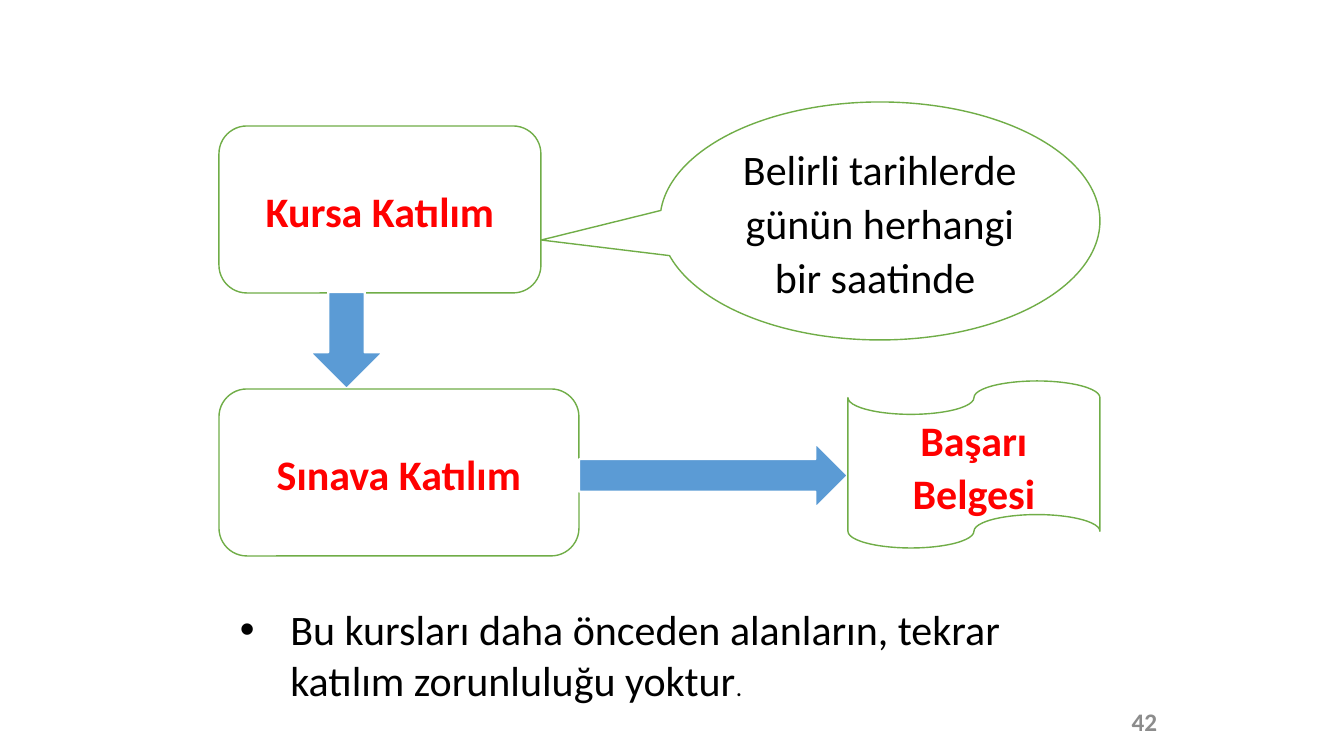
from dataclasses import dataclass

from lxml import etree
from pptx import Presentation
from pptx import util as u
from pptx.dml import color
from pptx.enum import shapes, text
from pptx.oxml import ns

PX = 914400 / 100.8
KIND = shapes.MSO_SHAPE


@dataclass(frozen=True)
class Theme:
    font: str = "Calibri"
    white: str = "FFFFFF"
    black: str = "000000"
    red: str = "FF0000"
    green: str = "70AD47"
    blue: str = "5B9BD5"
    grey: str = "8C8C8C"
    body: int = 30
    small: int = 18


THEME = Theme()


def px(*lengths):
    return [u.Emu(round(length * PX)) for length in lengths]


def rgb(value):
    return color.RGBColor.from_string(value)


def add_span(para, words, size, tint, bold=False):
    span = para.add_run()
    span.text = words
    span.font.name = THEME.font
    span.font.size = u.Pt(size)
    span.font.bold = bold
    span.font.color.rgb = rgb(tint)


def add_shape(page, kind, at, fill, line, width):
    shape = page.shapes.add_shape(kind, *px(*at))
    shape.shadow.inherit = False
    shape.fill.solid()
    shape.fill.fore_color.rgb = rgb(fill)
    shape.line.color.rgb = rgb(line)
    shape.line.width = u.Pt(width)
    return shape


def add_step(page, kind, at, words, tint=THEME.red, bold=True):
    """Add a white, green-edged shape with centred text."""
    step = add_shape(page, kind, at, THEME.white, THEME.green, 1)
    frame = step.text_frame
    frame.word_wrap = True
    frame.vertical_anchor = text.MSO_ANCHOR.MIDDLE
    para = frame.paragraphs[0]
    para.alignment = text.PP_ALIGN.CENTER
    para.line_spacing = 1.07
    para.space_after = u.Pt(8)
    add_span(para, words, THEME.body, tint, bold)
    return step


def add_arrow(page, kind, at):
    add_shape(page, kind, at, THEME.blue, THEME.white, 1.5)


def add_text_box(page, at):
    """Add a wrapping text box and return its frame."""
    frame = page.shapes.add_textbox(*px(*at)).text_frame
    frame.word_wrap = True
    return frame


def add_bullet(para, indent):
    props = para._p.get_or_add_pPr()
    props.set("marL", str(indent))
    props.set("indent", str(-indent))
    etree.SubElement(props, ns.qn("a:buFont")).set("typeface", "Arial")
    etree.SubElement(props, ns.qn("a:buChar")).set("char", "•")


def add_note(page):
    para = add_text_box(page, (230, 599, 871, 112)).paragraphs[0]
    add_bullet(para, u.Inches(0.5))
    add_span(para, "Bu kursları daha önceden alanların, tekrar katılım zorunluluğu yoktur",
             THEME.body, THEME.black)
    add_span(para, ".", THEME.small, THEME.black)


def add_page_number(page):
    frame = add_text_box(page, (865, 701, 302, 40))
    frame.vertical_anchor = text.MSO_ANCHOR.MIDDLE
    para = frame.paragraphs[0]
    para.alignment = text.PP_ALIGN.RIGHT
    add_span(para, "42", THEME.small, THEME.grey, bold=True)


def main():
    deck = Presentation()
    deck.slide_width, deck.slide_height = px(1344, 756)
    page = deck.slides.add_slide(deck.slide_layouts[6])

    add_note(page)
    add_step(page, KIND.FLOWCHART_ALTERNATE_PROCESS, (219, 126, 322, 167), "Kursa Katılım")
    add_arrow(page, KIND.DOWN_ARROW, (310, 292, 73, 97))
    add_step(page, KIND.FLOWCHART_ALTERNATE_PROCESS, (219, 389, 360, 167), "Sınava Katılım")
    add_arrow(page, KIND.RIGHT_ARROW, (579, 443, 269, 65))
    add_step(page, KIND.FLOWCHART_PUNCHED_TAPE, (848, 381, 252, 167), "Başarı Belgesi")
    callout = add_step(page, KIND.OVAL_CALLOUT, (660, 102, 440, 238),
                       "Belirli tarihlerde günün herhangi bir saatinde ",
                       THEME.black, bold=False)
    callout.adjustments[0] = -0.77
    callout.adjustments[1] = 0.08
    add_page_number(page)

    deck.save("out.pptx")


if __name__ == "__main__":
    main()
